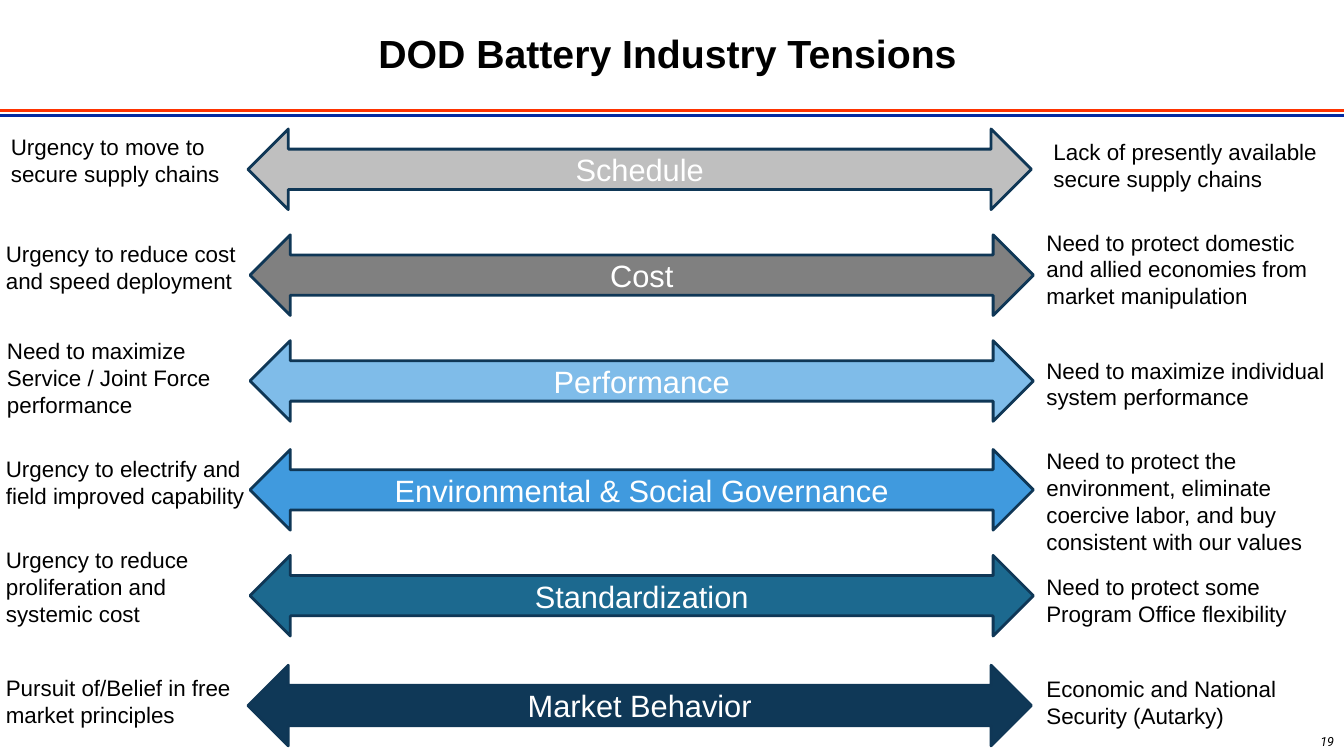
from lxml import etree
from pptx import Presentation
from pptx.dml.color import RGBColor
from pptx.enum import shapes, text
from pptx.oxml.ns import qn
from pptx.util import Inches, Pt

SLIDE_WIDTH = 13.33
ARROW_WIDTH, ARROW_HEIGHT = 7.77, 0.8
OUTLINE = "0F3756"

# Each tension: name, fill, arrow (left, top), then both sides as (left, top, width, height, wording)
TENSIONS = [
    ("Schedule", "BFBFBF", (2.46, 1.28),
     (0.01, 1.27, 2.34, 0.64, "Urgency to move to secure supply chains"),
     (10.35, 1.32, 2.83, 0.64, "Lack of presently available secure supply chains")),
    ("Cost", "808080", (2.48, 2.33),
     (-0.04, 2.33, 2.53, 0.64, "Urgency to reduce cost and speed deployment"),
     (10.28, 2.22, 3.05, 0.91,
      "Need to protect domestic and allied economies from market manipulation")),
    ("Performance", "7FBCE9", (2.48, 3.38),
     (-0.03, 3.3, 2.61, 0.91, "Need to maximize Service / Joint Force performance"),
     (10.28, 3.49, 3, 0.64, "Need to maximize individual system performance")),
    ("Environmental & Social Governance", "409ADE", (2.48, 4.46),
     (-0.04, 4.47, 2.61, 0.64, "Urgency to electrify and field improved capability"),
     (10.28, 4.39, 3.23, 1.18,
      "Need to protect the environment, eliminate coercive labor, and "
      "buy consistent with our values")),
    ("Standardization", "1C698F", (2.48, 5.51),
     (-0.04, 5.37, 2.61, 0.91, "Urgency to reduce proliferation and systemic cost"),
     (10.28, 5.64, 3, 0.64, "Need to protect some Program Office flexibility")),
    ("Market Behavior", "0F3857", (2.46, 6.6),
     (-0.04, 6.64, 2.61, 0.64, "Pursuit of/Belief in free market principles"),
     (10.28, 6.65, 2.61, 0.64, "Economic and National Security (Autarky)")),
]


def color(hex_code):
    return RGBColor.from_string(hex_code)


def write(frame, wording, size, hex_code="000000", font="Arial",
          align=text.PP_ALIGN.LEFT, anchor=text.MSO_ANCHOR.TOP):
    frame.word_wrap = True
    frame.vertical_anchor = anchor
    paragraph = frame.paragraphs[0]
    paragraph.text = wording
    paragraph.alignment = align
    paragraph.font.name = font
    paragraph.font.size = Pt(size)
    paragraph.font.color.rgb = color(hex_code)
    return paragraph


def add_title(slide, wording):
    title = slide.shapes.title
    title.left, title.top = Inches(1.18), Inches(0.26)
    title.width, title.height = Inches(10.88), Inches(0.6)
    paragraph = write(title.text_frame, wording, 28, align=text.PP_ALIGN.CENTER,
                      anchor=text.MSO_ANCHOR.MIDDLE)
    paragraph.font.bold = True
    paragraph.line_spacing = 0.85


def add_rule(slide, top, hex_code, weight):
    rule = slide.shapes.add_connector(shapes.MSO_CONNECTOR.STRAIGHT, Inches(0), Inches(top),
                                      Inches(SLIDE_WIDTH), Inches(top))
    rule.line.color.rgb = color(hex_code)
    rule.line.width = Pt(weight)
    etree.SubElement(rule._element.spPr, qn("a:effectLst"))


def add_label(slide, left, top, width, height, wording, size=16, **style):
    label = slide.shapes.add_textbox(Inches(left), Inches(top), Inches(width), Inches(height))
    return write(label.text_frame, wording, size, **style)


def add_arrow(slide, left, top, wording, fill):
    arrow = slide.shapes.add_shape(shapes.MSO_SHAPE.LEFT_RIGHT_ARROW, Inches(left), Inches(top),
                                   Inches(ARROW_WIDTH), Inches(ARROW_HEIGHT))
    arrow.shadow.inherit = False
    arrow.fill.solid()
    arrow.fill.fore_color.rgb = color(fill)
    arrow.line.color.rgb = color(OUTLINE)
    arrow.line.width = Pt(2)
    write(arrow.text_frame, wording, 22, "FFFFFF", align=text.PP_ALIGN.CENTER,
          anchor=text.MSO_ANCHOR.MIDDLE)


def main():
    """Build the slide of opposing pressures on the battery industry."""
    deck = Presentation()
    deck.slide_width, deck.slide_height = Inches(SLIDE_WIDTH), Inches(7.5)
    slide = deck.slides.add_slide(deck.slide_layouts[5])
    add_rule(slide, 1.15, "032AA1", 2.25)
    add_rule(slide, 1.1, "FF3300", 2)
    add_title(slide, "DOD Battery Industry Tensions")
    for name, fill, (left, top), urge, counterweight in TENSIONS:
        add_arrow(slide, left, top, name, fill)
        add_label(slide, *urge)
        add_label(slide, *counterweight)
    page_number = add_label(slide, 12, 7.23, 1.33, 0.27, "19", size=9, font="Roboto",
                            align=text.PP_ALIGN.RIGHT)
    page_number.font.italic = True
    deck.save("out.pptx")


if __name__ == "__main__":
    main()
